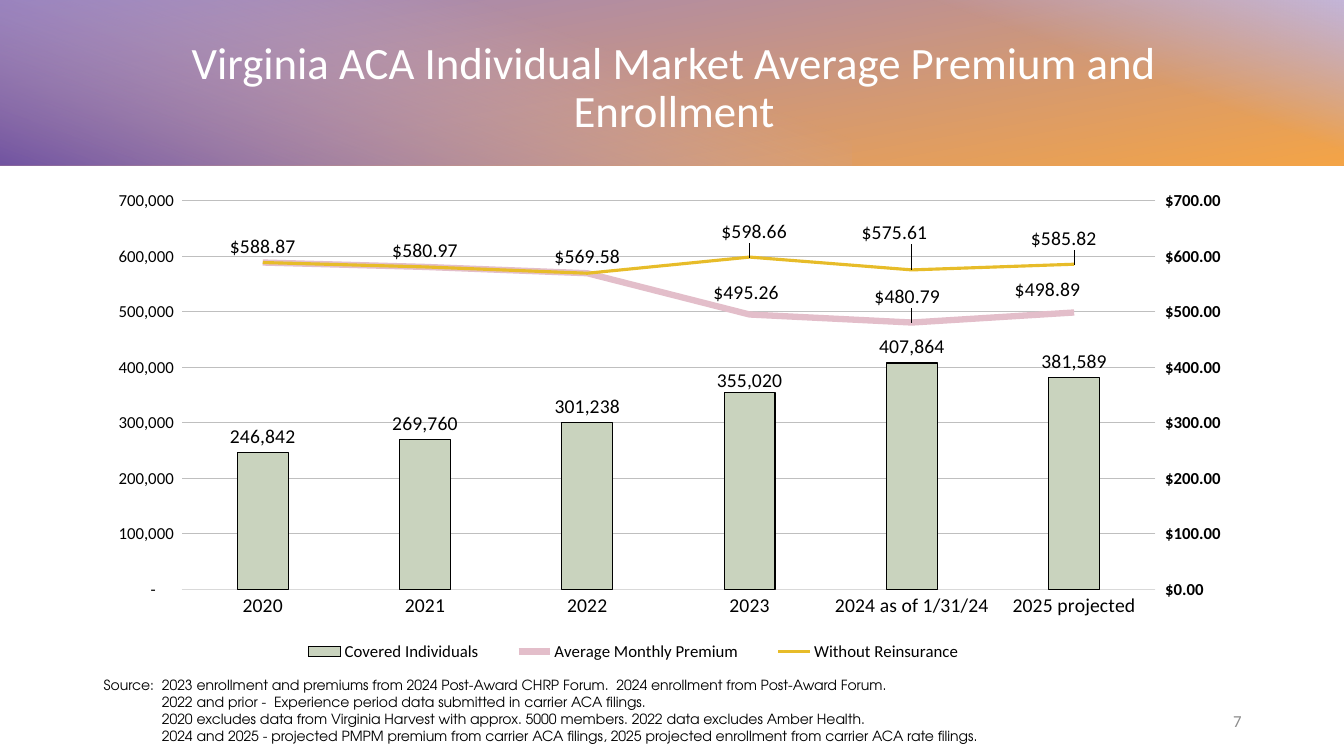
"""Build a slide with a combined chart of Virginia premiums and enrollment."""
import dataclasses
from typing import Optional

import pptx
import pptx.chart.axis
import pptx.chart.data
import pptx.dml.color
import pptx.enum.chart
import pptx.enum.shapes
import pptx.enum.text
import pptx.oxml
import pptx.oxml.ns
import pptx.util

Pt = pptx.util.Pt
RGBColor = pptx.dml.color.RGBColor
qn = pptx.oxml.ns.qn
Align = pptx.enum.text.PP_ALIGN
Position = pptx.enum.chart.XL_LABEL_POSITION
TickMark = pptx.enum.chart.XL_TICK_MARK

BLACK = RGBColor(0x00, 0x00, 0x00)
WHITE = RGBColor(0xFF, 0xFF, 0xFF)
GRAY = RGBColor(0x8C, 0x8C, 0x8C)
GRID = RGBColor(0xBF, 0xBF, 0xBF)
AXIS = RGBColor(0xD9, 0xD9, 0xD9)
PURPLE = RGBColor(0x9C, 0x85, 0xC0)
ORANGE = RGBColor(0xF3, 0xA4, 0x47)
LAVENDER = RGBColor(0xC4, 0xB6, 0xD9)
VIOLET = RGBColor(0x71, 0x53, 0xA1)
SAGE = RGBColor(0xC9, 0xD3, 0xBE)
PINK = RGBColor(0xE3, 0xBE, 0xCA)
GOLD = RGBColor(0xE7, 0xBC, 0x29)

BODY_FONT = "Calibri"
SOURCE_FONT = "TeX Gyre Adventor"
COUNT_FORMAT = "#,##0"
DOLLAR_FORMAT = '"$"#,##0.00'
ACCOUNT_FORMAT = '_(* #,##0_);_(* \\(#,##0\\);_(* "-"??_);_(@_)'
CHART_NAMESPACE = 'xmlns:c="http://schemas.openxmlformats.org/drawingml/2006/chart"'
YEARS = ["2020", "2021", "2022", "2023", "2024 as of 1/31/24", "2025 projected"]
SOURCES = [
    "Source:\t2023 enrollment and premiums from 2024 Post-Award CHRP Forum.  2024 enrollment from Post-Award Forum.",
    "2022 and prior -  Experience period data submitted in carrier ACA filings.",
    "2020 excludes data from Virginia Harvest with approx. 5000 members. 2022 data excludes Amber Health.",
    "2024 and 2025 - projected PMPM premium from carrier ACA filings, 2025 projected enrollment from carrier ACA rate filings.",
]


@dataclasses.dataclass
class Band:
    left: float
    width: float
    angle: float
    first: RGBColor
    last: RGBColor
    start: float = 0
    fades: bool = False


@dataclasses.dataclass
class Measure:
    name: str
    values: list
    color: RGBColor
    line_color: RGBColor
    line_width: float
    number_format: str
    position: Position
    offsets: dict


BANDS = [
    Band(0, 960, 280, PURPLE, ORANGE),
    Band(562, 398, 70, LAVENDER, LAVENDER, 0.59, True),
    Band(0, 608, 250, LAVENDER, VIOLET, 0.29, True),
]
MEASURES = [
    Measure("Covered Individuals", [246842, 269760, 301238, 355020, 407864, 381589],
            SAGE, BLACK, 0.75, COUNT_FORMAT, Position.OUTSIDE_END,
            {0: (0, 0), 1: (0, 0), 2: (0, 0), 3: (0, 0.01), 4: (0, 0), 5: (0, 0)}),
    Measure("Average Monthly Premium", [588.87, 580.97, 569.58, 495.26, 480.79, 498.89],
            PINK, PINK, 4.5, DOLLAR_FORMAT, Position.ABOVE,
            {0: (0, 0), 1: (0, 0), 2: (0, 0), 3: (-0.003, -0.013), 4: (-0.004, -0.02), 5: (-0.023, -0.015)}),
    Measure("Without Reinsurance", [588.87, 580.97, 569.58, 598.66, 575.61, 585.82],
            GOLD, GOLD, 2.25, DOLLAR_FORMAT, Position.ABOVE,
            {3: (0.004, -0.02), 4: (-0.015, -0.044), 5: (-0.009, -0.02)}),
]


def chart_xml(markup: str):
    """Parse a chart fragment inside the chart namespace."""
    name_end = min(markup.index(mark) for mark in " />" if mark in markup)
    return pptx.oxml.parse_xml(f"{markup[:name_end]} {CHART_NAMESPACE}{markup[name_end:]}")


def style_font(font, size: float, color: RGBColor = BLACK, name: str = BODY_FONT, bold: bool = False) -> None:
    """Set the face, size, color and weight of a font."""
    font.name, font.size, font.bold = name, Pt(size), bold
    font.color.rgb = color


def write_text(frame, text: str, *, size: float, color: RGBColor = BLACK, font: str = BODY_FONT,
               align: Align = Align.LEFT, spacing: Optional[float] = None, indent: float = 0) -> None:
    """Fill a text frame with one paragraph for each line of text."""
    frame.word_wrap = True
    frame.auto_size = pptx.enum.text.MSO_AUTO_SIZE.NONE
    frame.vertical_anchor = pptx.enum.text.MSO_ANCHOR.MIDDLE
    frame.margin_top = frame.margin_bottom = 0
    for index, line in enumerate(text.split("\n")):
        para = frame.add_paragraph() if index else frame.paragraphs[0]
        para.alignment, para.line_spacing = align, spacing
        if indent:
            properties = para._p.get_or_add_pPr()
            properties.set("marL", str(int(Pt(indent))))
            properties.set("indent", str(0 if index else -int(Pt(indent))))
        span = para.add_run()
        span.text = line
        style_font(span.font, size, color, font)


def draw_band(shapes, band: Band) -> None:
    """Draw one gradient rectangle of the header."""
    box = shapes.add_shape(pptx.enum.shapes.MSO_SHAPE.RECTANGLE, Pt(band.left), 0, Pt(band.width), Pt(118))
    box.shadow.inherit = False
    box.line.fill.background()
    box.fill.gradient()
    box.fill.gradient_angle = band.angle
    first, last = box.fill.gradient_stops
    first.color.rgb, last.color.rgb = band.first, band.last
    first.position, last.position = band.start, 1
    if band.fades:
        color = next(box._element.iter(qn("a:srgbClr")))
        color.append(color.makeelement(qn("a:alpha"), {"val": "0"}))


def layout_markup(x: float, y: float, size: str = "", mode: str = "") -> str:
    """Return the markup of a manual chart layout."""
    return f'<c:layout><c:manualLayout>{mode}<c:x val="{x}"/><c:y val="{y}"/>{size}</c:manualLayout></c:layout>'


def edge_layout(x: float, y: float, width: float, height: float, target: str = ""):
    """Return a layout measured from the chart's edges."""
    mode = target + '<c:xMode val="edge"/><c:yMode val="edge"/>'
    return chart_xml(layout_markup(x, y, f'<c:w val="{width}"/><c:h val="{height}"/>', mode))


def remove_children(parent, tag: str) -> None:
    """Remove every direct child with the given tag."""
    for child in parent.findall(qn(tag)):
        parent.remove(child)


def move_premiums_to_lines(plot_area) -> None:
    """Move the premium series to a line plot on a second axis."""
    bar = plot_area.find(qn("c:barChart"))
    lines = chart_xml('<c:lineChart><c:grouping val="standard"/><c:varyColors val="0"/>'
                      '<c:marker val="1"/><c:axId val="501"/><c:axId val="502"/></c:lineChart>')
    for series in bar.findall(qn("c:ser"))[1:]:
        remove_children(series, "c:invertIfNegative")
        lines.find(qn("c:marker")).addprevious(series)
    bar.addnext(lines)
    last_axis = plot_area.find(qn("c:valAx"))
    for kind, own, other, limits, hidden, side, crosses in (
            ("valAx", 502, 501, '<c:max val="700"/><c:min val="0"/>', 0, "r", "max"),
            ("catAx", 501, 502, "", 1, "b", "autoZero")):
        last_axis.addnext(chart_xml(
            f'<c:{kind}><c:axId val="{own}"/><c:scaling><c:orientation val="minMax"/>{limits}</c:scaling>'
            f'<c:delete val="{hidden}"/><c:axPos val="{side}"/>'
            '<c:numFmt formatCode="&quot;$&quot;#,##0.00" sourceLinked="0"/>'
            '<c:majorTickMark val="out"/><c:minorTickMark val="none"/><c:tickLblPos val="nextTo"/>'
            f'<c:crossAx val="{other}"/><c:crosses val="{crosses}"/></c:{kind}>'))


def style_series(series, measure: Measure) -> None:
    """Color a series and place its value labels."""
    series.format.line.color.rgb = measure.line_color
    series.format.line.width = Pt(measure.line_width)
    if measure.position == Position.ABOVE:
        series.smooth = False
        series.marker.style = pptx.enum.chart.XL_MARKER_STYLE.NONE
    else:
        series.format.fill.solid()
        series.format.fill.fore_color.rgb = measure.color
    series.data_labels.show_value = False
    for index in measure.offsets:
        label = series.points[index].data_label
        style_font(label.font, 14)
        label.position = measure.position
    for element in list(series._element.iter(qn("c:dLbl"))):
        index = element.find(qn("c:idx"))
        style = chart_xml('<c:numFmt formatCode="General" sourceLinked="0"/>')
        style.set("formatCode", measure.number_format)
        index.addnext(style)
        across, down = measure.offsets[int(index.get("val"))]
        if across or down:
            index.addnext(chart_xml(layout_markup(across, down)))


def draw_chart(page) -> None:
    """Draw enrollment columns and premium lines."""
    data = pptx.chart.data.CategoryChartData()
    data.categories = YEARS
    for measure in MEASURES:
        data.add_series(measure.name, measure.values, measure.number_format)
    chart = page.shapes.add_chart(pptx.enum.chart.XL_CHART_TYPE.COLUMN_CLUSTERED,
                                  Pt(66), Pt(134.6), Pt(828), Pt(342.7), data).chart
    chart.has_title = False
    style_font(chart.font, 10)
    plot_area = chart._chartSpace.chart.plotArea
    remove_children(plot_area, "c:layout")
    plot_area.insert(0, edge_layout(0.077, 0.026, 0.84, 0.81, '<c:layoutTarget val="inner"/>'))

    years, counts = chart.category_axis, chart.value_axis
    years.major_tick_mark = counts.major_tick_mark = TickMark.NONE
    years.format.line.color.rgb, years.format.line.width = AXIS, Pt(0.75)
    style_font(years.tick_labels.font, 14)
    counts.minimum_scale, counts.maximum_scale, counts.major_unit = 0, 700000, 100000
    counts.major_gridlines.format.line.color.rgb = GRID
    counts.major_gridlines.format.line.width = Pt(0.75)
    counts.tick_labels.number_format = ACCOUNT_FORMAT
    counts.tick_labels.number_format_is_linked = False

    move_premiums_to_lines(plot_area)
    dollars = pptx.chart.axis.ValueAxis(plot_area.findall(qn("c:valAx"))[1])
    for axis, bold in ((counts, False), (dollars, True)):
        axis.format.line.fill.background()
        style_font(axis.tick_labels.font, 12, bold=bold)
    chart.plots[0].gap_width = 219
    chart.plots[0].vary_by_categories = False
    all_series = [series for plot in chart.plots for series in plot.series]
    for series, measure in zip(all_series, MEASURES):
        style_series(series, measure)

    chart.has_legend = True
    chart.legend.position = pptx.enum.chart.XL_LEGEND_POSITION.BOTTOM
    chart.legend.include_in_layout = False
    style_font(chart.legend.font, 12)
    legend = chart.legend._element
    remove_children(legend, "c:layout")
    placement = edge_layout(0.157, 0.94, 0.62, 0.05)
    position = legend.find(qn("c:legendPos"))
    legend.insert(0 if position is None else 1, placement)


def main() -> None:
    """Build and save the deck."""
    deck = pptx.Presentation()
    deck.slide_width, deck.slide_height = Pt(960), Pt(540)
    page = deck.slides.add_slide(deck.slide_layouts[5])
    title = page.shapes.title
    header = page.shapes.add_group_shape()
    for band in BANDS:
        draw_band(header.shapes, band)
    header._element.addnext(title._element)
    title.left, title.top, title.width, title.height = Pt(69), Pt(23.8), Pt(825), Pt(79.2)
    write_text(title.text_frame, "Virginia ACA Individual Market Average Premium and Enrollment",
               size=32, color=WHITE, align=Align.CENTER, spacing=0.9)
    draw_chart(page)
    source = page.shapes.add_textbox(Pt(67), Pt(483.5), Pt(804), Pt(48))
    write_text(source.text_frame, "\n".join(SOURCES), size=10, font=SOURCE_FONT, indent=41.5)
    number = page.shapes.add_textbox(Pt(708.5), Pt(500.4), Pt(185.5), Pt(28.8))
    write_text(number.text_frame, "7", size=12, color=GRAY, align=Align.RIGHT)
    deck.save("out.pptx")


if __name__ == "__main__":
    main()
